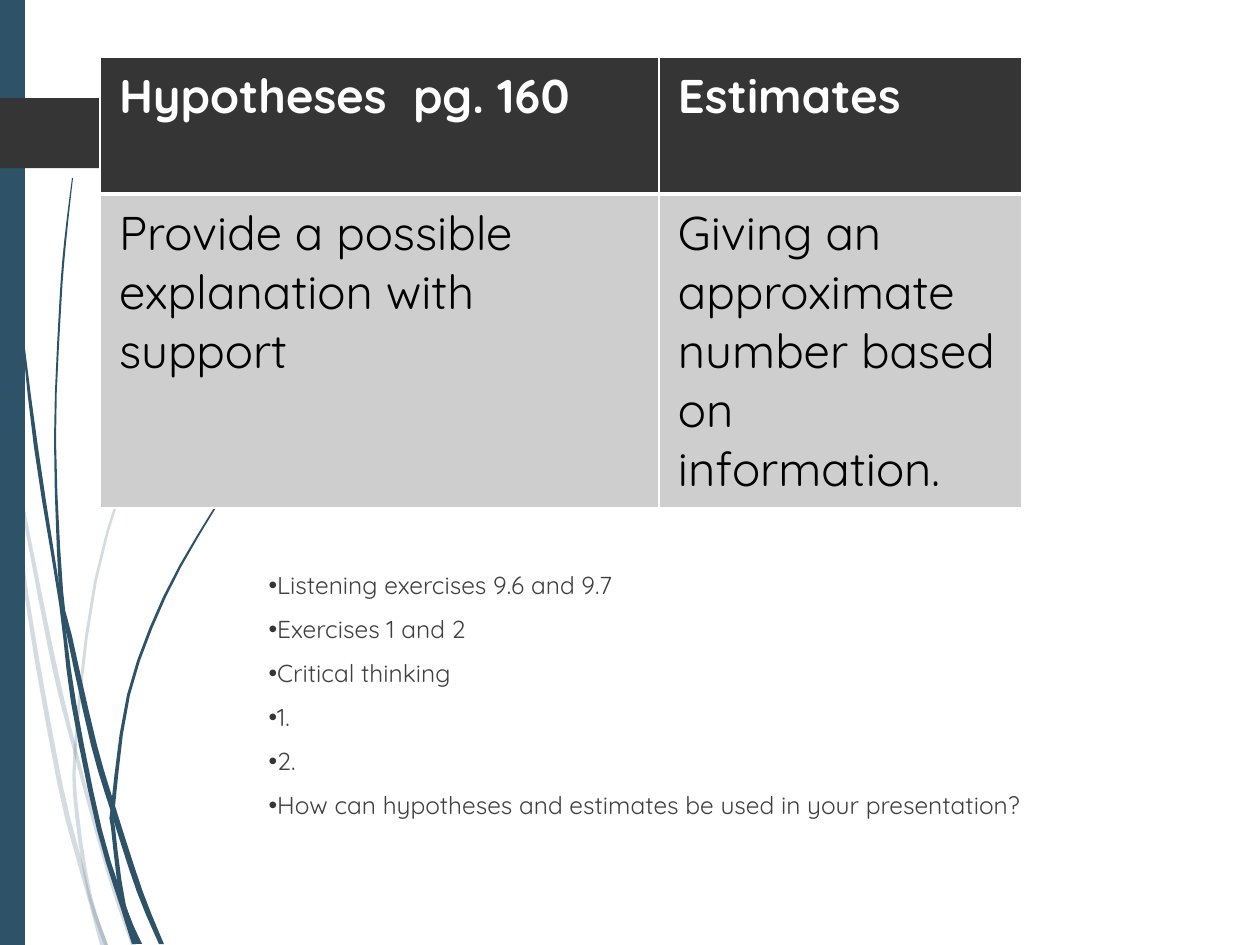
from lxml import etree
from pptx import Presentation
from pptx import util as u
from pptx.dml.color import RGBColor
from pptx.enum import shapes, text
from pptx.oxml import ns

PX = 914400 // 126
STEPS = 3
FONT = "Quicksand"
BLUE = RGBColor(0x2E, 0x53, 0x69)
DARK = RGBColor(0x35, 0x35, 0x35)
GREY = RGBColor(0xCE, 0xCE, 0xCE)
INK = RGBColor(0x40, 0x40, 0x40)
BLACK = RGBColor(0, 0, 0)
WHITE = RGBColor(0xFF, 0xFF, 0xFF)

# Each strand: the rows where it is cut, then its rows of (y, left x, right x)
PALE = [
    ((1, 4), [(355, 0, 2), (441, 10, 13), (474, 15, 18), (658, 50, 55),
              (754, 74, 78), (874, 107, 111), (945, 131, 136)]),
    ((4,), [(441, 10, 10), (592, 24, 28), (782, 57, 62), (861, 77, 82),
            (900, 88, 92), (945, 100, 108)]),
    ((4, 6), [(193, 273, 274), (308, 199, 201), (439, 138, 140),
              (581, 94, 97), (745, 74, 77), (814, 75, 79), (896, 88, 92),
              (945, 104, 108)]),
]
DEEP = [
    ((4, 7), [(0, 2, 4), (138, 6, 8), (293, 18, 19), (447, 34, 38),
              (603, 59, 62), (702, 71, 76), (830, 97, 102), (909, 121, 127),
              (944, 132, 142)]),
    ((4, 7), [(178, 72, 73), (243, 64, 66), (309, 59, 61), (440, 54, 56),
              (590, 59, 63), (636, 67, 72), (745, 91, 97), (812, 111, 117),
              (892, 137, 143), (944, 159, 164)]),
    ((5, 7), [(433, 271, 273), (470, 241, 243), (511, 212, 214),
              (597, 163, 166), (695, 127, 130), (807, 111, 115),
              (827, 111, 115), (906, 121, 126), (944, 134, 142)]),
]
ITEMS = [
    "Listening exercises 9.6 and 9.7", "Exercises 1 and 2",
    "Critical thinking", "1.", "2.",
    "How can hypotheses and estimates be used in your presentation?",
]
ROWS = [
    ("Hypotheses  pg. 160", "Estimates"),
    ("Provide a possible explanation with support",
     "Giving an approximate number based on information."),
]


def box(*vals):
    return [v * PX for v in vals]


def add(node, tag, **attrs):
    return etree.SubElement(node, ns.qn(tag), attrs)


def paint(shape, color, alpha=None):
    shape.shadow.inherit = False
    shape.fill.solid()
    shape.fill.fore_color.rgb = color
    shape.line.fill.background()
    if alpha:
        clr = next(shape._element.spPr.iter(ns.qn("a:srgbClr")))
        add(clr, "a:alpha", val=str(alpha * 1000))


def smooth(rows):
    """Run a Catmull-Rom curve through the rows."""
    ends = [rows[0], *rows, rows[-1]]
    out = []
    for quad in zip(ends, ends[1:], ends[2:], ends[3:]):
        for i in range(STEPS):
            t = i / STEPS
            out.append([b + t / 2 * (c - a + t * (2 * a - 5 * b + 4 * c - d
                        + t * (3 * (b - c) + d - a)))
                        for a, b, c, d in zip(*quad)])
    return out + [rows[-1]]


def strand(slide, cuts, rows, alpha=None):
    curve = smooth(rows)
    stops = [0, *cuts, len(rows) - 1]
    for top, end in zip(stops, stops[1:]):
        part = curve[top * STEPS:end * STEPS + 1]
        edge = [(l, y) for y, l, r in part]
        edge += [(r, y) for y, l, r in reversed(part)]
        pts = [(round(x * PX), round(y * PX)) for x, y in edge]
        pen = slide.shapes.build_freeform(*pts[0])
        pen.add_line_segments(pts[1:], close=True)
        paint(pen.convert_to_shape(), BLUE, alpha)


def block(slide, kind, color, *place):
    paint(slide.shapes.add_shape(kind, *box(*place)), color)


def write(para, words, size, color, bold=False):
    run = para.add_run()
    run.text = words
    font = run.font
    font.name, font.size, font.bold = FONT, u.Pt(size), bold
    font.color.rgb = color


def bullets(body, items):
    body.left, body.top, body.width, body.height = box(256, 567, 921, 176)
    frame = body.text_frame
    frame.word_wrap = True
    frame.auto_size = text.MSO_AUTO_SIZE.NONE
    for i, item in enumerate(items):
        para = frame.add_paragraph() if i else frame.paragraphs[0]
        para.line_spacing = 0.9
        para.space_before = u.Pt(10)
        props = para._p.get_or_add_pPr()
        props.set("marL", "0")
        props.set("indent", "0")
        add(add(props, "a:buClr"), "a:srgbClr", val=str(DARK))
        add(props, "a:buChar", char="•")
        write(para, item, 14, INK)


def border(cell, head):
    props = cell._tc.get_or_add_tcPr()
    thick = "B" if head else "T"
    for side in "LRTB":
        width = u.Pt(3 if side == thick else 1)
        line = add(props, f"a:ln{side}", w=str(width))
        add(add(line, "a:solidFill"), "a:srgbClr", val=str(WHITE))


def table(slide, rows):
    grid = slide.shapes.add_table(2, 2, *box(100, 57, 922, 451)).table
    for col, wide in zip(grid.columns, (559, 363)):
        col.width = wide * PX
    for row, high in zip(grid.rows, (137, 314)):
        row.height = high * PX
    for i, row in enumerate(rows):
        head = i == 0
        for j, words in enumerate(row):
            cell = grid.cell(i, j)
            border(cell, head)
            cell.margin_left = cell.margin_right = 19 * PX
            cell.margin_top = cell.margin_bottom = 9 * PX
            cell.fill.solid()
            cell.fill.fore_color.rgb = DARK if head else GREY
            write(cell.text_frame.paragraphs[0], words, 27,
                  WHITE if head else BLACK, head)


def main():
    deck = Presentation()
    deck.slide_width, deck.slide_height = box(1260, 945)
    slide = deck.slides.add_slide(deck.slide_layouts[1])
    title = slide.shapes.title._element
    title.getparent().remove(title)

    # Side decoration
    for cuts, rows in PALE:
        strand(slide, cuts, rows, 20)
    for cuts, rows in DEEP:
        strand(slide, cuts, rows)
    block(slide, shapes.MSO_SHAPE.RECTANGLE, BLUE, 0, 0, 25, 945)
    block(slide, shapes.MSO_SHAPE.PENTAGON, DARK, 0, 98, 188, 70)

    # Content
    bullets(slide.placeholders[1], ITEMS)
    table(slide, ROWS)
    deck.save("out.pptx")


if __name__ == "__main__":
    main()
